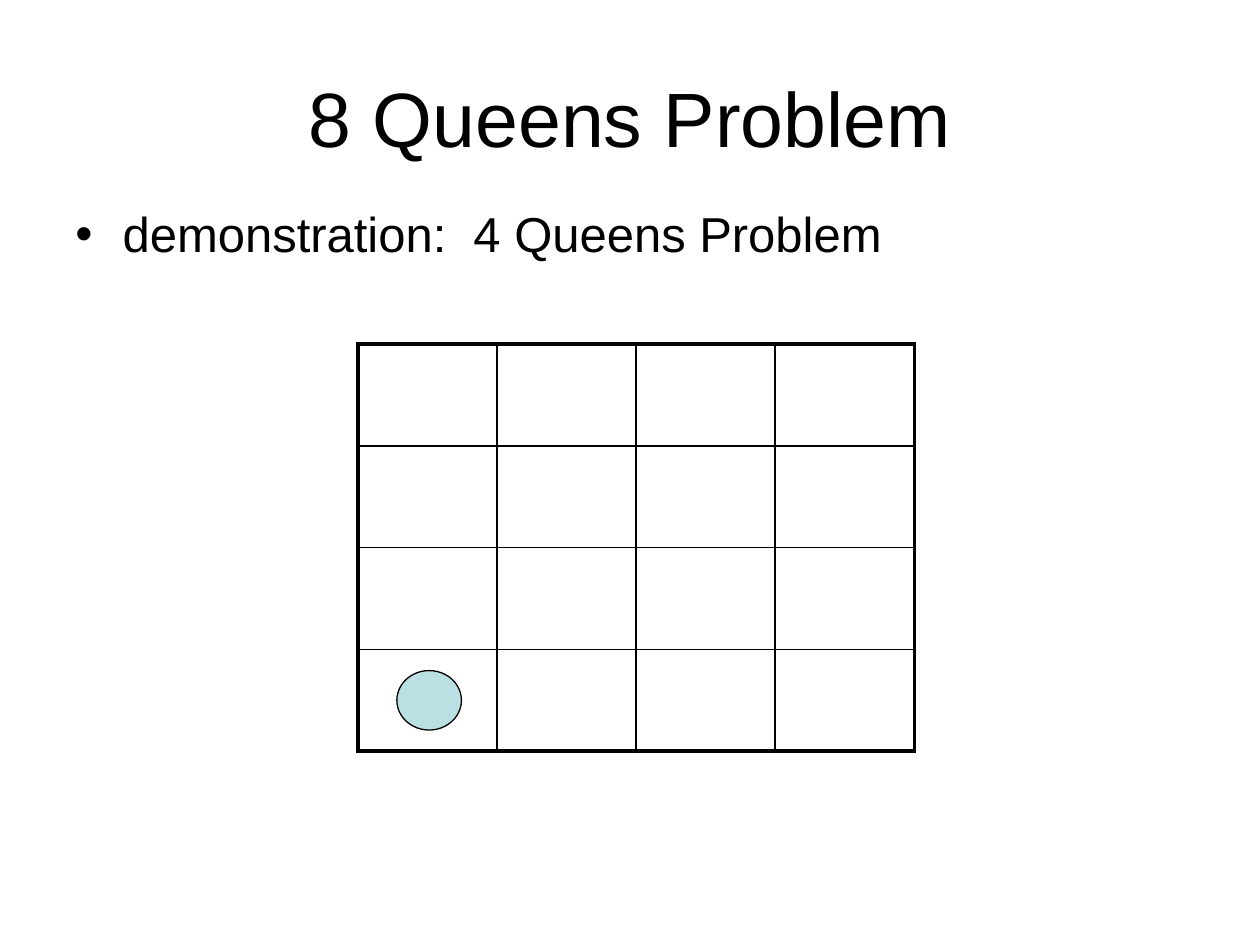
from lxml import etree
from pptx import Presentation
from pptx import util as u
from pptx.dml.color import RGBColor
from pptx.enum import shapes, text
from pptx.oxml import ns

BLACK = RGBColor(0x00, 0x00, 0x00)
WHITE = RGBColor(0xFF, 0xFF, 0xFF)
QUEEN = RGBColor(0xBB, 0xE0, 0xE3)
SIZE = 4
THIN, THICK = 1, 2.25


def points(*values):
    """Return the values as lengths in points."""
    return [u.Pt(v) for v in values]


def set_all(obj, values):
    """Set each attribute in values on obj."""
    for name, value in values.items():
        setattr(obj, name, value)


def write(p, words, size):
    """Add a run of black Arial text to a paragraph."""
    r = p.add_run()
    r.text = words
    set_all(r.font, {"name": "Arial", "size": u.Pt(size)})
    r.font.color.rgb = BLACK


def add_title(s, words):
    """Place and fill the title placeholder."""
    sp = s.shapes.title
    set_all(sp, dict(zip(("left", "top", "width", "height"), points(36, 21.6, 648, 90))))
    tf = sp.text_frame
    set_all(tf, {"vertical_anchor": text.MSO_ANCHOR.MIDDLE, "word_wrap": True})
    p = tf.paragraphs[0]
    p.alignment = text.PP_ALIGN.CENTER
    write(p, words, 44)


def add_bullet(s, words):
    """Add a text box with one bulleted paragraph."""
    tf = s.shapes.add_textbox(*points(36, 116.6, 638.6, 38.9)).text_frame
    tf.word_wrap = True
    p = tf.paragraphs[0]
    p.line_spacing = 0.9
    pr = p._p.get_or_add_pPr()
    pr.set("marL", str(u.Pt(27)))
    pr.set("indent", str(u.Pt(-27)))
    etree.SubElement(pr, ns.qn("a:buFont"), typeface="Arial")
    etree.SubElement(pr, ns.qn("a:buChar"), char="•")
    write(p, words, 28)


def set_borders(cell, widths):
    """Draw black cell borders, given widths by side in L, R, T, B order."""
    pr = cell._tc.get_or_add_tcPr()
    for i, (side, width) in enumerate(widths.items()):
        ln = etree.Element(ns.qn(f"a:ln{side}"), w=str(u.Pt(width)))
        fill = etree.SubElement(ln, ns.qn("a:solidFill"))
        etree.SubElement(fill, ns.qn("a:srgbClr"), val=str(BLACK))
        pr.insert(i, ln)


def add_board(s):
    """Add the empty board with a thick outer edge."""
    table = s.shapes.add_table(SIZE, SIZE, *points(204.5, 196.6, 318, 232.6)).table
    set_all(table, {"first_row": False, "horz_banding": False})
    last = SIZE - 1
    for row in range(SIZE):
        for col in range(SIZE):
            cell = table.cell(row, col)
            cell.fill.background()
            edges = {"L": col == 0, "R": col == last, "T": row == 0, "B": row == last}
            set_borders(cell, {k: THICK if edge else THIN for k, edge in edges.items()})


def add_queen(s, left, top):
    """Add a round queen piece."""
    sp = s.shapes.add_shape(shapes.MSO_SHAPE.OVAL, *points(left, top, 36.9, 34))
    sp.shadow.inherit = False
    sp.fill.solid()
    sp.fill.fore_color.rgb = QUEEN
    sp.line.color.rgb = BLACK
    sp.line.width = u.Pt(0.75)


def main():
    """Build and save the slide."""
    prs = Presentation()
    set_all(prs, {"slide_width": u.Pt(720), "slide_height": u.Pt(540)})
    s = prs.slides.add_slide(prs.slide_layouts[5])
    s.background.fill.solid()
    s.background.fill.fore_color.rgb = WHITE
    add_title(s, "8 Queens Problem")
    add_bullet(s, "demonstration:  4 Queens Problem")
    add_board(s)
    add_queen(s, 226.8, 383.2)
    prs.save("out.pptx")


if __name__ == "__main__":
    main()
